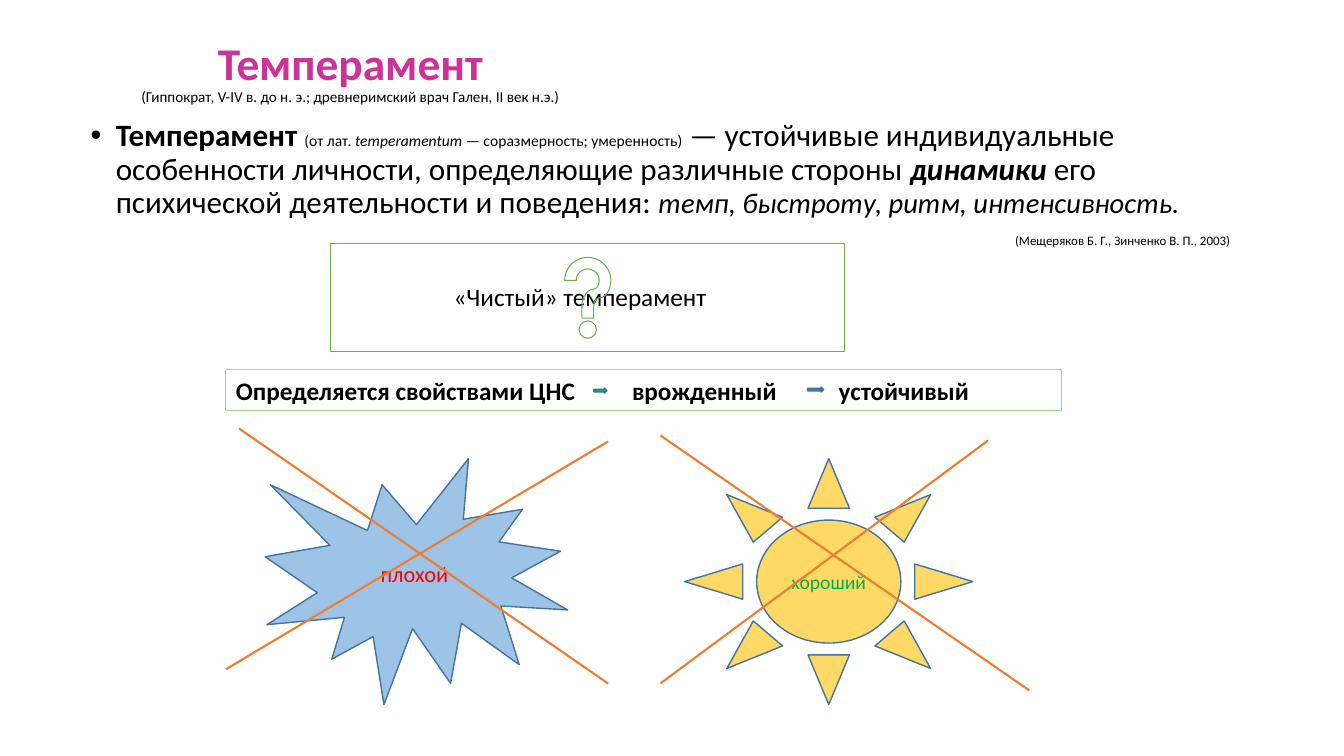
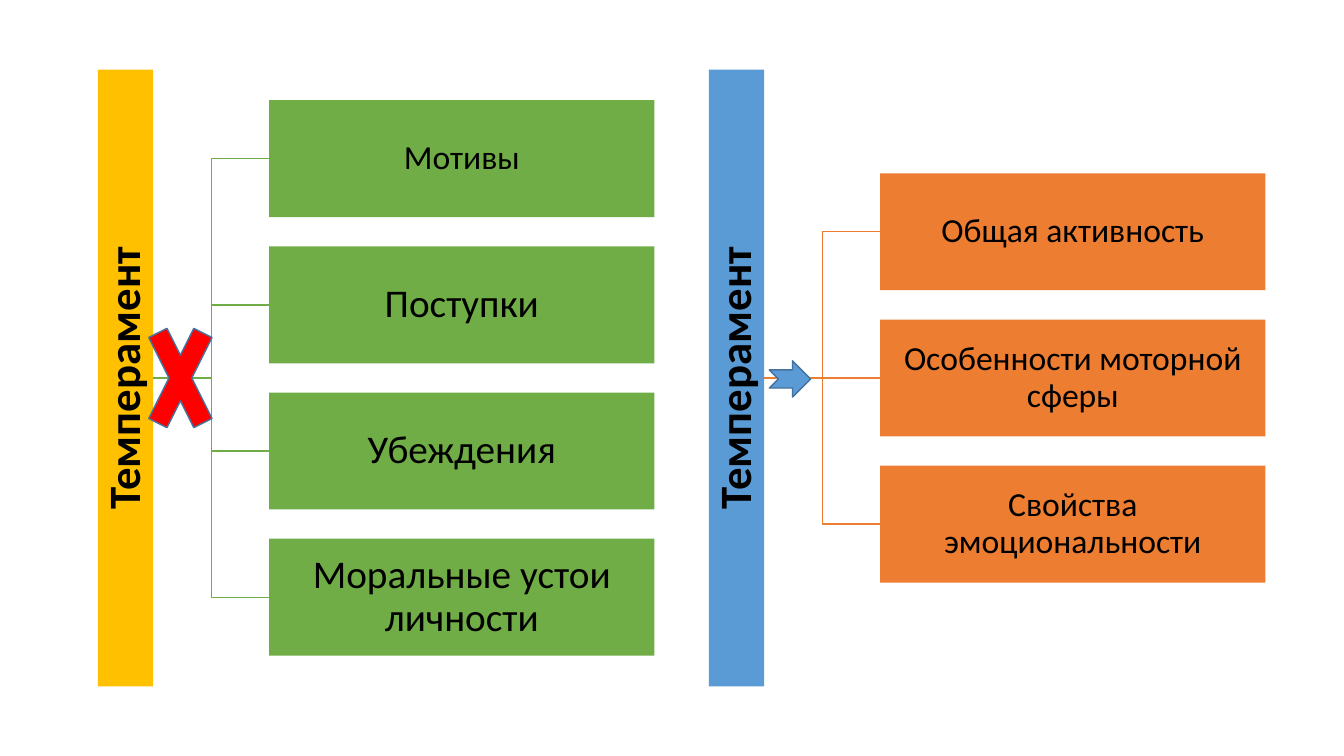
from dataclasses import dataclass

import lxml.etree
import pptx
import pptx.dml.color
import pptx.enum.shapes
import pptx.enum.text
import pptx.oxml.ns
import pptx.util

Inches = pptx.util.Inches
Pt = pptx.util.Pt
SHAPE = pptx.enum.shapes.MSO_SHAPE
CONNECTOR = pptx.enum.shapes.MSO_CONNECTOR
ALIGN = pptx.enum.text.PP_ALIGN
ANCHOR = pptx.enum.text.MSO_ANCHOR
AUTO_SIZE = pptx.enum.text.MSO_AUTO_SIZE
qn = pptx.oxml.ns.qn

FONT = "Calibri"
COLORS = {
    "text": "000000", "title": "CC3399", "outline": "43739E",
    "green": "70AD47", "pale_green": "A9D18E", "bright_green": "00B050",
    "orange": "ED7D31", "blue": "5B9BD5", "pale_blue": "9DC3E6",
    "gold": "FFC000", "yellow": "FFD966", "red": "FF0000",
}


@dataclass
class Box:
    left: float
    top: float
    width: float
    height: float

    def emu(self) -> list:
        return [Inches(v) for v in (self.left, self.top, self.width, self.height)]


@dataclass
class Figure:
    kind: int
    box: Box
    fill: str
    label: str = ""
    size: float = 18
    color: str = "text"


@dataclass
class Tree:
    left: float
    bar_color: str
    branch_color: str
    branches: list  # (label, text size)


def rgb(name: str):
    return pptx.dml.color.RGBColor.from_string(COLORS[name])


# Text
def write(p, text: str, size: float = 18, color: str = "text",
          bold: bool = False, italic: bool = False):
    r = p.add_run()
    r.text = text
    r.font.name, r.font.size = FONT, Pt(size)
    r.font.bold, r.font.italic = bold, italic
    r.font.color.rgb = rgb(color)
    return r


def add_textbox(slide, box: Box, wrap: bool = True):
    tf = slide.shapes.add_textbox(*box.emu()).text_frame
    tf.word_wrap = wrap
    return tf


def break_line(p, size: float):
    p.add_line_break()
    br = p._p.findall(qn("a:br"))[-1]
    lxml.etree.SubElement(br, qn("a:rPr"), sz=str(round(size * 100)))


def set_bullet(p, indent: float):
    pPr = p._p.get_or_add_pPr()
    pPr.set("marL", str(Inches(indent)))
    pPr.set("indent", str(-Inches(indent)))
    lxml.etree.SubElement(pPr, qn("a:buFont"), typeface="Arial")
    lxml.etree.SubElement(pPr, qn("a:buChar"), char="•")


def set_tabs(p, stops: list):
    tabs = lxml.etree.SubElement(p._p.get_or_add_pPr(), qn("a:tabLst"))
    for stop in stops:
        lxml.etree.SubElement(tabs, qn("a:tab"), pos=str(Inches(stop)), algn="l")


# Shapes and lines
def add_shape(slide, kind: int, box: Box, fill: str = "", line: str = "", width: float = 1):
    sp = slide.shapes.add_shape(kind, *box.emu())
    sp.shadow.inherit = False
    if fill:
        sp.fill.solid()
        sp.fill.fore_color.rgb = rgb(fill)
    else:
        sp.fill.background()
    if line:
        sp.line.color.rgb = rgb(line)
        sp.line.width = Pt(width)
    else:
        sp.line.fill.background()
    return sp


def add_figure(slide, fig: Figure):
    sp = add_shape(slide, fig.kind, fig.box, fig.fill, "outline")
    if fig.label:
        p = sp.text_frame.paragraphs[0]
        p.alignment = ALIGN.CENTER
        write(p, fig.label, size=fig.size, color=fig.color)


def add_line(slide, kind: int, ends: tuple, color: str, width: float):
    cxn = slide.shapes.add_connector(kind, *[Inches(v) for v in ends])
    cxn.line.color.rgb = rgb(color)
    cxn.line.width = Pt(width)
    lxml.etree.SubElement(cxn._element.spPr, qn("a:effectLst"))
    return cxn


# Tree of a vertical bar and its branches
CENTER_Y = 3.75
BAR_W, BAR_H = 0.55, 6.12
BRANCH_W, BRANCH_H, BRANCH_GAP = 3.82, 1.16, 0.29
BRANCH_OFFSET = 1.7


def add_tree_box(slide, box: Box, fill: str, label: str, size: float, bold: bool = False):
    sp = add_shape(slide, SHAPE.RECTANGLE, box, fill)
    tf = sp.text_frame
    tf.margin_left = tf.margin_right = tf.margin_top = tf.margin_bottom = Inches(0.02)
    p = tf.paragraphs[0]
    p.alignment, p.line_spacing = ALIGN.CENTER, 0.9
    write(p, label, size=size, bold=bold)
    return sp


def add_tree(slide, tree: Tree):
    bar = add_tree_box(slide, Box(tree.left, CENTER_Y - BAR_H / 2, BAR_W, BAR_H),
                       tree.bar_color, "Темперамент", 32, bold=True)
    bar.text_frame._txBody.bodyPr.set("vert", "vert270")
    pitch = BRANCH_H + BRANCH_GAP
    middle = (len(tree.branches) - 1) / 2
    left = tree.left + BRANCH_OFFSET
    for i, (label, size) in enumerate(tree.branches):
        y = CENTER_Y + (i - middle) * pitch
        sp = add_tree_box(slide, Box(left, y - BRANCH_H / 2, BRANCH_W, BRANCH_H),
                          tree.branch_color, label, size)
        kind = CONNECTOR.STRAIGHT if i == middle else CONNECTOR.ELBOW
        cxn = add_line(slide, kind, (tree.left + BAR_W, CENTER_Y, left, y),
                       tree.branch_color, 1)
        cxn.begin_connect(bar, 3)
        cxn.end_connect(sp, 1)


def build_definition(prs):
    slide = prs.slides.add_slide(prs.slide_layouts[5])

    # Title
    title = slide.shapes.title
    title.left, title.top, title.width, title.height = Box(0.92, 0.4, 5.11, 0.66).emu()
    tf = title.text_frame
    tf.auto_size, tf.vertical_anchor = AUTO_SIZE.NONE, ANCHOR.MIDDLE
    p = tf.paragraphs[0]
    p.alignment, p.line_spacing = ALIGN.CENTER, 0.9
    write(p, "Темперамент", size=32.4, color="title", bold=True)
    break_line(p, 32.4)
    write(p, "(Гиппократ, V-IV в. до н. э.; древнеримский врач Гален, II век н.э.)", size=10.8)

    # Definition and its reference
    tf = add_textbox(slide, Box(0.8, 1.14, 11.5, 1.5))
    p = tf.paragraphs[0]
    p.line_spacing, p.space_before = 0.9, Pt(10)
    set_bullet(p, 0.25)
    write(p, "Темперамент ", size=22.2, bold=True)
    write(p, "(от лат. ", size=11.1)
    write(p, "temperamentum ", size=11.1, italic=True)
    write(p, "— соразмерность; умеренность)", size=11.1)
    write(p, " — устойчивые индивидуальные особенности личности, "
             "определяющие различные стороны ", size=22.2)
    write(p, "динамики", size=22.2, bold=True, italic=True)
    write(p, " его психической деятельности и поведения: ", size=22.2)
    write(p, "темп, быстроту, ритм, интенсивность.", size=20.4, italic=True)
    p = tf.add_paragraph()
    p.alignment, p.line_spacing, p.space_before = ALIGN.RIGHT, 0.9, Pt(10)
    write(p, "(Мещеряков Б. Г., Зинченко В. П., 2003)", size=9.2)

    # Question
    tf = add_textbox(slide, Box(4.4, 2.74, 2.74, 0.4), wrap=False)
    write(tf.paragraphs[0], "«Чистый» темперамент")
    add_shape(slide, SHAPE.ACTION_BUTTON_HELP, Box(3.28, 2.42, 5.1, 1.07),
              line="green", width=0.75)

    # Chain of properties
    sp = add_shape(slide, SHAPE.RECTANGLE, Box(2.24, 3.67, 8.29, 0.4),
                   line="pale_green", width=0.75)
    sp.text_frame.vertical_anchor = ANCHOR.TOP
    p = sp.text_frame.paragraphs[0]
    p.alignment = ALIGN.LEFT
    set_tabs(p, [3.93, 5.98])
    write(p, "Определяется свойствами ЦНС\tврожденный\tустойчивый", bold=True)

    # Arrows of the chain, then the two crossed-out figures
    for fig in (
        Figure(SHAPE.RIGHT_ARROW, Box(5.89, 3.85, 0.13, 0.05), "bright_green"),
        Figure(SHAPE.RIGHT_ARROW, Box(8.01, 3.84, 0.16, 0.05), "bright_green"),
        Figure(SHAPE.SUN, Box(6.79, 4.55, 2.86, 2.44), "yellow",
               "хороший", 14, "bright_green"),
        Figure(SHAPE.EXPLOSION1, Box(2.63, 4.55, 3, 2.44), "pale_blue",
               "плохой", 16, "red"),
    ):
        add_figure(slide, fig)
    for ends in (
        (2.37, 4.25, 6.03, 6.78), (6.03, 4.38, 2.24, 6.64),
        (6.55, 4.32, 10.21, 6.85), (9.8, 4.37, 6.55, 6.78),
    ):
        add_line(slide, CONNECTOR.STRAIGHT, ends, "orange", 1.5)


def build_influence(prs):
    slide = prs.slides.add_slide(prs.slide_layouts[6])
    add_tree(slide, Tree(0.97, "gold", "green", [
        ("Мотивы", 24), ("Поступки", 28), ("Убеждения", 28),
        ("Моральные устои личности", 28)]))
    add_tree(slide, Tree(7.03, "blue", "orange", [
        ("Общая активность", 24), ("Особенности моторной сферы", 24),
        ("Свойства эмоциональности", 24)]))

    # Marks: does not determine, determines
    add_figure(slide, Figure(SHAPE.MATH_MULTIPLY, Box(1.36, 2.89, 0.86, 1.72), "red"))
    add_figure(slide, Figure(SHAPE.NOTCHED_RIGHT_ARROW, Box(7.63, 3.58, 0.41, 0.36), "blue"))


def main():
    prs = pptx.Presentation()
    prs.slide_width, prs.slide_height = Inches(13.33), Inches(7.5)
    build_definition(prs)
    build_influence(prs)
    prs.save("out.pptx")


if __name__ == "__main__":
    main()
